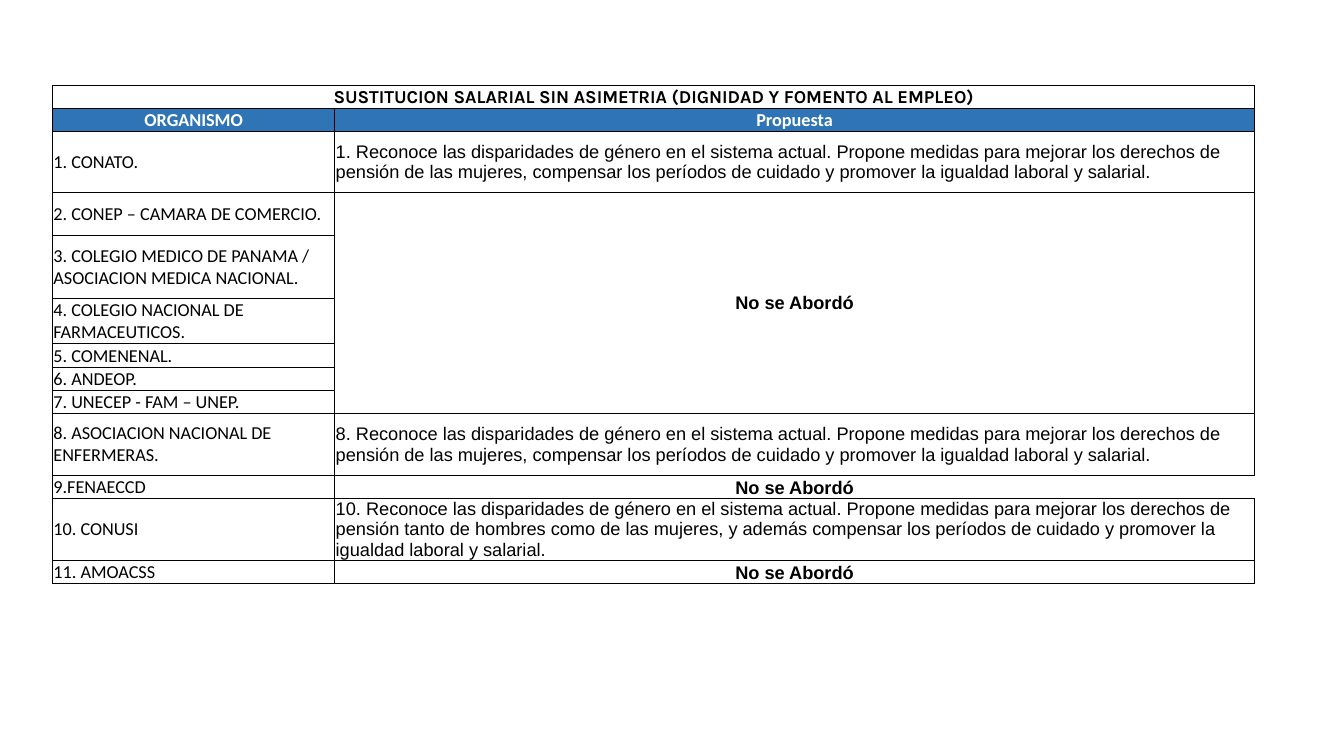
from dataclasses import dataclass
from typing import Optional

from lxml.etree import SubElement
from pptx import Presentation
from pptx.dml.color import RGBColor
from pptx.enum.text import MSO_ANCHOR, PP_ALIGN
from pptx.oxml.ns import qn
from pptx.table import _Cell
from pptx.util import Inches, Pt

BLACK = RGBColor(0x00, 0x00, 0x00)
WHITE = RGBColor(0xFF, 0xFF, 0xFF)
HEADER_BLUE = RGBColor(0x2F, 0x75, 0xB5)

COLUMN_WIDTHS = (2.8, 9.12)
TITLE = "SUSTITUCION SALARIAL SIN ASIMETRIA (DIGNIDAD Y FOMENTO AL EMPLEO)"
NOT_ADDRESSED = "No se Abordó"
GENDER_GAP = (
    "Reconoce las disparidades de género en el sistema actual. "
    "Propone medidas para mejorar los derechos de pensión "
)
WOMEN_PROPOSAL = (
    GENDER_GAP + "de las mujeres, compensar los períodos de cuidado "
    "y promover la igualdad laboral y salarial."
)
EVERYONE_PROPOSAL = (
    GENDER_GAP + "tanto de hombres como de las mujeres, y además compensar "
    "los períodos de cuidado y promover la igualdad laboral y salarial."
)


@dataclass(frozen=True)
class CellStyle:
    font: str
    bold: bool = False
    color: RGBColor = BLACK
    fill: Optional[RGBColor] = None
    align: PP_ALIGN = PP_ALIGN.LEFT
    anchor: MSO_ANCHOR = MSO_ANCHOR.MIDDLE
    edges: str = "LRTB"


@dataclass(frozen=True)
class TableRow:
    height: float
    organization: str
    proposal: str
    organization_style: CellStyle
    proposal_style: CellStyle


TITLE_STYLE = CellStyle("Karla", bold=True, align=PP_ALIGN.CENTER)
HEADER = CellStyle("Calibri", True, WHITE, HEADER_BLUE, PP_ALIGN.CENTER)
ORGANIZATION = CellStyle("Calibri")
PROPOSAL = CellStyle("Arial")
ABSENT = CellStyle("Arial", bold=True, align=PP_ALIGN.CENTER)
ABSENT_LOW = CellStyle("Arial", bold=True, align=PP_ALIGN.CENTER, anchor=MSO_ANCHOR.BOTTOM)
ABSENT_OPEN = CellStyle(
    "Arial", bold=True, align=PP_ALIGN.CENTER, anchor=MSO_ANCHOR.BOTTOM, edges="LTB"
)

ROWS = (
    TableRow(0.2, TITLE, "", TITLE_STYLE, TITLE_STYLE),
    TableRow(0.21, "ORGANISMO", "Propuesta", HEADER, HEADER),
    TableRow(0.61, "1. CONATO.", "1. " + WOMEN_PROPOSAL, ORGANIZATION, PROPOSAL),
    TableRow(0.42, "2. CONEP – CAMARA DE COMERCIO.", NOT_ADDRESSED, ORGANIZATION, ABSENT),
    TableRow(
        0.63, "3. COLEGIO MEDICO DE PANAMA / ASOCIACION MEDICA NACIONAL.", "",
        ORGANIZATION, ABSENT,
    ),
    TableRow(0.42, "4. COLEGIO NACIONAL DE FARMACEUTICOS.", "", ORGANIZATION, ABSENT),
    TableRow(0.21, "5. COMENENAL.", "", ORGANIZATION, ABSENT),
    TableRow(0.21, "6. ANDEOP.", "", ORGANIZATION, ABSENT),
    TableRow(0.21, "7. UNECEP - FAM – UNEP.", "", ORGANIZATION, ABSENT),
    TableRow(
        0.61, "8. ASOCIACION NACIONAL DE ENFERMERAS.", "8. " + WOMEN_PROPOSAL,
        ORGANIZATION, PROPOSAL,
    ),
    TableRow(0.21, "9.FENAECCD", NOT_ADDRESSED, ORGANIZATION, ABSENT_OPEN),
    TableRow(0.61, "10. CONUSI", "10. " + EVERYONE_PROPOSAL, ORGANIZATION, PROPOSAL),
    TableRow(0.21, "11. AMOACSS", NOT_ADDRESSED, ORGANIZATION, ABSENT_LOW),
)


def draw_borders(cell: _Cell, edges: str) -> None:
    properties = cell._tc.get_or_add_tcPr()
    for edge in "LRTB":
        line = SubElement(properties, qn(f"a:ln{edge}"), w=str(Pt(0.5)))
        if edge in edges:
            fill = SubElement(line, qn("a:solidFill"))
            SubElement(fill, qn("a:srgbClr"), val=str(BLACK))
        else:
            SubElement(line, qn("a:noFill"))


def fill_cell(cell: _Cell, text: str, style: CellStyle) -> None:
    draw_borders(cell, style.edges)
    if style.fill is None:
        cell.fill.background()
    else:
        cell.fill.solid()
        cell.fill.fore_color.rgb = style.fill
    cell.margin_left = cell.margin_right = cell.margin_top = Inches(0.01)
    cell.margin_bottom = 0
    cell.vertical_anchor = style.anchor
    cell.text = text
    paragraph = cell.text_frame.paragraphs[0]
    paragraph.alignment = style.align
    paragraph.font.name = style.font
    paragraph.font.size = Pt(13)
    paragraph.font.bold = style.bold
    paragraph.font.color.rgb = style.color


def main() -> None:
    presentation = Presentation()
    presentation.slide_width = Inches(13.33)
    presentation.slide_height = Inches(7.5)
    slide = presentation.slides.add_slide(presentation.slide_layouts[6])

    frame = slide.shapes.add_table(
        len(ROWS), len(COLUMN_WIDTHS),
        Inches(0.52), Inches(0.85), Inches(sum(COLUMN_WIDTHS)), Inches(4.93),
    )
    table = frame.table
    table.first_row = False
    table.horz_banding = False
    for column, width in zip(table.columns, COLUMN_WIDTHS):
        column.width = Inches(width)
    for index, row in enumerate(ROWS):
        table.rows[index].height = Inches(row.height)
        fill_cell(table.cell(index, 0), row.organization, row.organization_style)
        fill_cell(table.cell(index, 1), row.proposal, row.proposal_style)
    table.cell(0, 0).merge(table.cell(0, 1))
    table.cell(3, 1).merge(table.cell(8, 1))
    frame.height = Inches(4.93)

    presentation.save("out.pptx")


if __name__ == "__main__":
    main()
